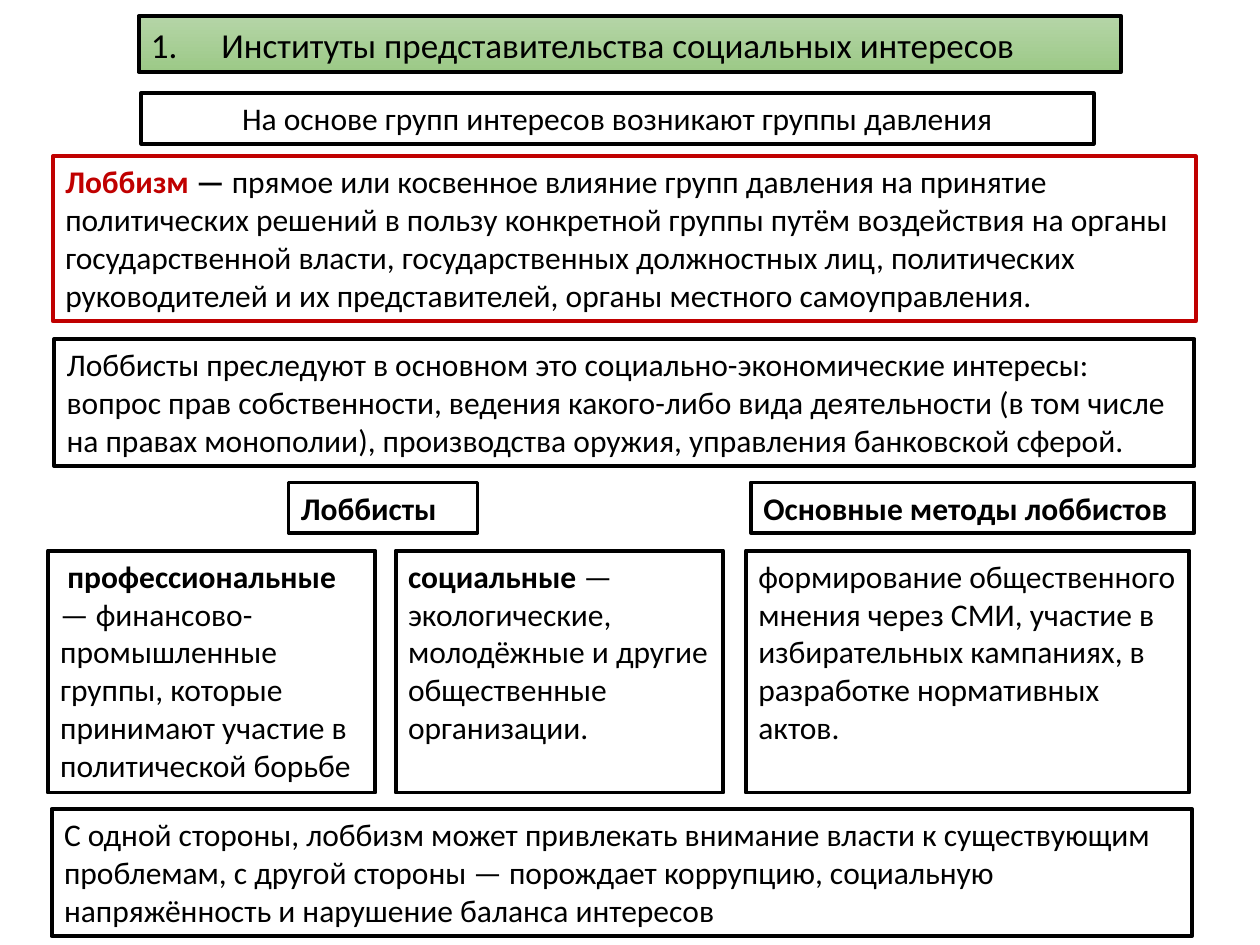
import pptx
import pptx.dml.color
import pptx.enum.shapes
import pptx.enum.text
import pptx.util
from lxml import etree
from pptx.oxml.ns import qn

Inches = pptx.util.Inches
Pt = pptx.util.Pt
Align = pptx.enum.text.PP_ALIGN
Anchor = pptx.enum.text.MSO_ANCHOR


class Theme:
    font = "Calibri"
    body = 18
    title = 20
    border = 2.25
    ink = "000000"
    paper = "FFFFFF"
    accent = "C00000"
    green = ("B5D5A7", "9CC987")


def rgb(code):
    return pptx.dml.color.RGBColor.from_string(code)


def run(text, **style):
    """Pair a piece of text with its format: bold, color, size."""
    return text, style


class Deck:
    def __init__(self, theme):
        self.theme = theme
        self.file = pptx.Presentation()
        self.file.slide_width = Inches(10)
        self.file.slide_height = Inches(7.5)
        self.slide = self.file.slides.add_slide(self.file.slide_layouts[6])

    def box(self, left, top, width, height, *runs, line=None,
            align=Align.LEFT, anchor=Anchor.TOP):
        """Draw a bordered white box with one paragraph of text."""
        shape = self.slide.shapes.add_shape(
            pptx.enum.shapes.MSO_SHAPE.RECTANGLE,
            Inches(left), Inches(top), Inches(width), Inches(height))
        shape.shadow.inherit = False
        shape.fill.solid()
        shape.fill.fore_color.rgb = rgb(self.theme.paper)
        shape.line.color.rgb = rgb(line or self.theme.ink)
        shape.line.width = Pt(self.theme.border)
        frame = shape.text_frame
        frame.word_wrap = True
        frame.vertical_anchor = anchor
        para = frame.paragraphs[0]
        para.alignment = align
        for text, style in runs:
            self.add_text(para, text, **style)
        return shape

    def add_text(self, para, text, bold=False, color=None, size=None):
        part = para.add_run()
        part.text = text
        part.font.name = self.theme.font
        part.font.size = Pt(size or self.theme.body)
        part.font.bold = bold
        part.font.color.rgb = rgb(color or self.theme.ink)

    def title(self, left, top, width, height, text):
        """Draw the numbered heading on a green gradient."""
        shape = self.box(left, top, width, height,
                         run(text, size=self.theme.title),
                         anchor=Anchor.MIDDLE)
        shape.fill.gradient()
        shape.fill.gradient_angle = 270
        for stop, (place, code) in zip(shape.fill.gradient_stops,
                                       enumerate(self.theme.green)):
            stop.position = place
            stop.color.rgb = rgb(code)
        props = shape.text_frame.paragraphs[0]._p.get_or_add_pPr()
        indent = Inches(0.56)
        props.set("marL", str(indent))
        props.set("indent", str(-indent))
        etree.SubElement(props, qn("a:buFont"), typeface="+mj-lt")
        etree.SubElement(props, qn("a:buAutoNum"), type="arabicPeriod")

    def save(self):
        self.file.save("out.pptx")


def main():
    theme = Theme()
    deck = Deck(theme)

    # Heading and lead
    deck.title(1.1, 0.13, 7.8, 0.44,
               "Институты представительства социальных интересов")
    deck.box(1.12, 0.74, 7.56, 0.4,
             run("На основе групп интересов возникают группы давления"),
             align=Align.CENTER)

    # Definition and interests
    deck.box(0.42, 1.24, 9.07, 1.31,
             run("Лоббизм", bold=True, color=theme.accent),
             run(" — ", bold=True),
             run("прямое или косвенное влияние групп давления на принятие "
                 "политических решений в пользу конкретной группы путём "
                 "воздействия на органы государственной власти, "
                 "государственных должностных лиц, политических "
                 "руководителей и их представителей, органы местного "
                 "самоуправления."),
             line=theme.accent)
    deck.box(0.43, 2.69, 9.05, 1.01,
             run("Лоббисты преследуют в основном это социально-экономические "
                 "интересы: вопрос прав собственности, ведения какого-либо "
                 "вида деятельности (в том числе на правах монополии), "
                 "производства оружия, управления банковской сферой."))

    # Column headings
    heads = [(2.29, 1.5, "Лоббисты"),
             (5.96, 3.52, "Основные методы лоббистов")]
    for left, width, text in heads:
        deck.box(left, 3.83, width, 0.4, run(text, bold=True))

    # Columns
    columns = [
        (0.38, 2.6, [run(" профессиональные", bold=True),
                     run(" — финансово-промышленные группы, которые "
                         "принимают участие в политической борьбе")]),
        (3.14, 2.6, [run("социальные", bold=True),
                     run(" — экологические, молодёжные и другие "
                         "общественные организации.")]),
        (5.92, 3.52, [run("формирование общественного мнения через СМИ, "
                          "участие в избирательных кампаниях, в разработке "
                          "нормативных актов.")]),
    ]
    for left, width, runs in columns:
        deck.box(left, 4.37, width, 1.92, *runs)

    # Conclusion
    deck.box(0.41, 6.42, 9.05, 1.01,
             run("С одной стороны, лоббизм может привлекать внимание власти "
                 "к существующим проблемам, с другой стороны — порождает "
                 "коррупцию, социальную напряжённость и нарушение баланса "
                 "интересов"))

    deck.save()


if __name__ == "__main__":
    main()
